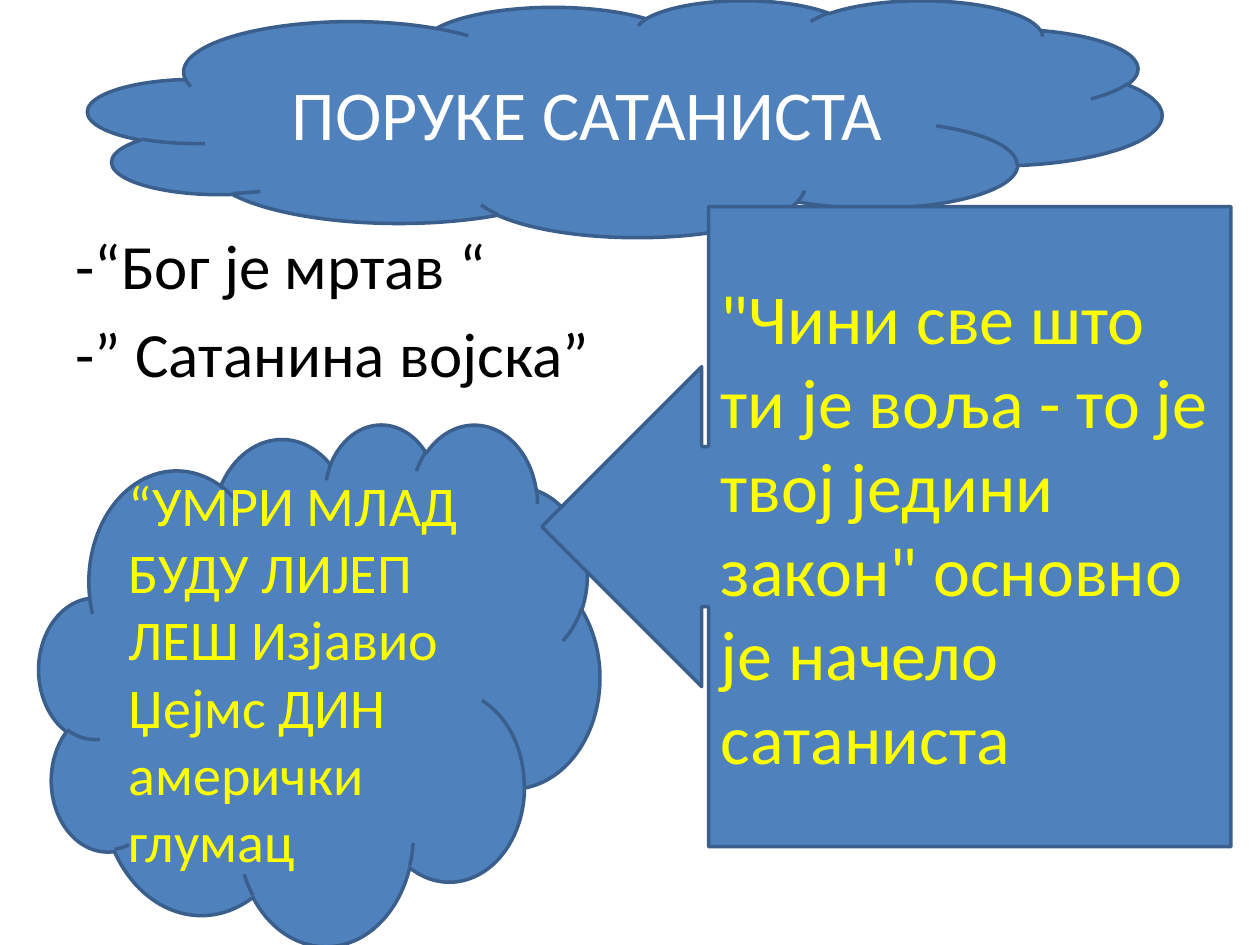
from pptx import Presentation
from pptx.dml.color import RGBColor
from pptx.enum.shapes import MSO_SHAPE
from pptx.enum.text import MSO_ANCHOR, PP_ALIGN
from pptx.util import Inches, Pt


def color(value):
    return RGBColor.from_string(value)


class SlideBuilder:
    """Holds the style and the slide being built."""

    font = "Calibri"
    fill = "4F81BD"
    outline = "3A5F8C"

    def __init__(self, slide):
        self.slide = slide

    def set_text(self, frame, lines, size, ink, align=PP_ALIGN.LEFT):
        frame.word_wrap = True
        frame.text = "\n".join(lines)
        for paragraph in frame.paragraphs:
            paragraph.alignment = align
            for run in paragraph.runs:
                run.font.name = self.font
                run.font.size = Pt(size)
                run.font.color.rgb = color(ink)

    def messages(self, box, lines, size):
        frame = self.slide.shapes.add_textbox(*map(Inches, box)).text_frame
        self.set_text(frame, lines, size, "000000")
        for paragraph in frame.paragraphs:
            paragraph.space_before = Pt(size * 0.2)
            properties = paragraph._p.get_or_add_pPr()
            properties.set("marL", str(Inches(0.38)))
            properties.set("indent", str(Inches(-0.38)))

    def bubble(self, kind, box, lines, size, ink, align=PP_ALIGN.LEFT):
        bubble = self.slide.shapes.add_shape(kind, *map(Inches, box))
        bubble.shadow.inherit = False
        bubble.fill.solid()
        bubble.fill.fore_color.rgb = color(self.fill)
        bubble.line.color.rgb = color(self.outline)
        bubble.line.width = Pt(2)
        bubble.text_frame.vertical_anchor = MSO_ANCHOR.MIDDLE
        self.set_text(bubble.text_frame, lines, size, ink, align)
        return bubble


def main():
    presentation = Presentation()
    presentation.slide_width = Inches(10)
    presentation.slide_height = Inches(7.5)
    builder = SlideBuilder(presentation.slides.add_slide(presentation.slide_layouts[6]))

    builder.messages((0.5, 1.75, 4.42, 4.95), ["-“Бог је мртав “", "-” Сатанина војска”"], 36)
    builder.bubble(MSO_SHAPE.CLOUD, (0.7, 0, 8.52, 1.88), ["ПОРУКЕ САТАНИСТА"],
                   40, "FFFFFF", PP_ALIGN.CENTER)
    builder.bubble(MSO_SHAPE.CLOUD, (0.31, 3.36, 4.45, 4.14),
                   ["“УМРИ МЛАД БУДУ ЛИЈЕП ЛЕШ Изјавио Џејмс ДИН", "амерички глумац"],
                   32, "FFFF00")
    principle = builder.bubble(
        MSO_SHAPE.LEFT_ARROW_CALLOUT, (4.3, 1.64, 5.47, 5.08),
        ['"Чини све што ти је воља - то је твој једини закон" основно је начело сатаниста'],
        40, "FFFF00")
    principle.adjustments[3] = 0.758

    presentation.save("out.pptx")


if __name__ == "__main__":
    main()
